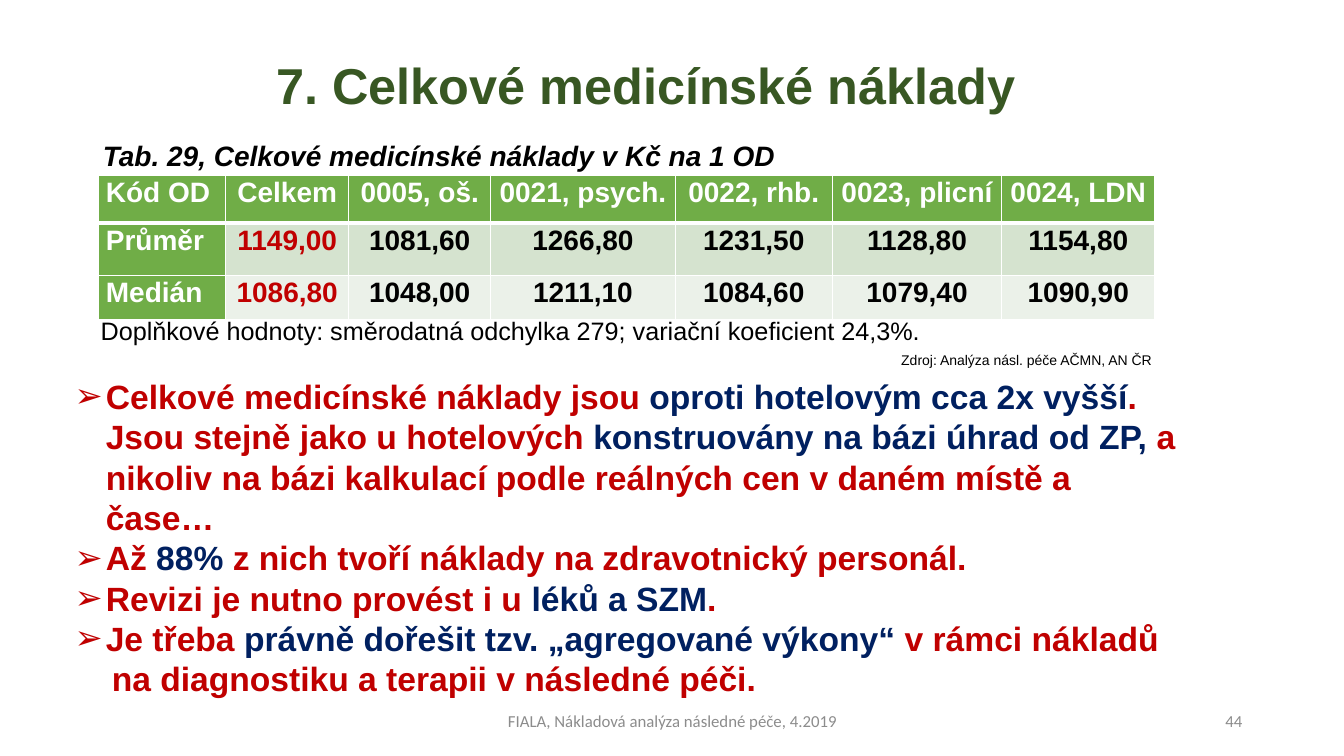
from itertools import cycle

from lxml import etree
from pptx import Presentation
from pptx import util as u
from pptx.dml.color import RGBColor
from pptx.enum import text
from pptx.oxml import ns

COLORS = {
    "title": "385723", "black": "000000", "white": "FFFFFF", "red": "C00000",
    "navy": "002060", "grey": "8C8C8C", "green": "70AD47",
    "band_dark": "D5E3CF", "band_light": "EBF1E9",
}
LEFT, CENTER, RIGHT, JUSTIFY = (
    text.PP_ALIGN.LEFT, text.PP_ALIGN.CENTER, text.PP_ALIGN.RIGHT, text.PP_ALIGN.JUSTIFY)

COST_TABLE = [
    ["Kód OD", "Celkem", "0005, oš.", "0021, psych.", "0022, rhb.", "0023, plicní", "0024, LDN"],
    ["Průměr", "1149,00", "1081,60", "1266,80", "1231,50", "1128,80", "1154,80"],
    ["Medián", "1086,80", "1048,00", "1211,10", "1084,60", "1079,40", "1090,90"],
]
COLUMN_SHARES = [9.45, 9.15, 10.57, 13.72, 11.7, 12.6, 11.4]
ROW_SHARES = [6.27, 6.93, 5.87]

# Asterisks switch between the main and the highlight colour.
FINDINGS = [
    "Celkové medicínské náklady jsou *oproti hotelovým cca 2x vyšší*. Jsou stejně jako "
    "u hotelových *konstruovány na bázi úhrad od ZP, *a nikoliv na bázi kalkulací podle "
    "reálných cen v daném místě a čase…",
    "Až *88%* z nich tvoří náklady na zdravotnický personál.",
    "Revizi je nutno provést i u *léků a SZM*.",
    "Je třeba *právně dořešit tzv. „agregované výkony“* v rámci nákladů",
]
FINDINGS_TAIL = "na diagnostiku a terapii v následné péči."


class SlideBuilder:
    """Places elements on one slide; every box is in percent of the slide's size."""

    def __init__(self, prs, layout):
        self.prs = prs
        self.s = prs.slides.add_slide(layout)

    def x(self, share):
        return int(self.prs.slide_width * share / 100)

    def y(self, share):
        return int(self.prs.slide_height * share / 100)

    def frame(self, box):
        left, top, width, height = box
        return self.x(left), self.y(top), self.x(width), self.y(height)

    def style(self, r, size, color, bold=False, italic=False, font="Arial"):
        r.font.size, r.font.name = u.Pt(size), font
        r.font.bold, r.font.italic = bold, italic
        r.font.color.rgb = RGBColor.from_string(COLORS[color])

    def paragraph(self, p, words, size, color, align=LEFT, spacing=1.0, before=0, **font):
        p.text = words
        p.alignment, p.line_spacing = align, spacing
        p.space_before, p.space_after = u.Pt(before), u.Pt(0)
        for r in p.runs:
            self.style(r, size, color, **font)

    def bullet(self, p, char=None, margin=0.0, indent=0.0):
        """Set the indents and the bullet; no char means no bullet."""
        pPr = p._p.get_or_add_pPr()
        pPr.set("marL", str(u.Inches(margin)))
        pPr.set("indent", str(u.Inches(indent)))
        if char:
            etree.SubElement(pPr, ns.qn("a:buFont"), typeface="Arial")
            etree.SubElement(pPr, ns.qn("a:buChar"), char=char)
        else:
            etree.SubElement(pPr, ns.qn("a:buNone"))

    def placeholder(self, idx, box, anchor=text.MSO_ANCHOR.TOP):
        sp = self.s.placeholders[idx]
        sp.left, sp.top, sp.width, sp.height = self.frame(box)
        tf = sp.text_frame
        tf.word_wrap, tf.auto_size = True, text.MSO_AUTO_SIZE.NONE
        tf.vertical_anchor = anchor
        return tf

    def title(self, words, box):
        tf = self.placeholder(0, box, text.MSO_ANCHOR.MIDDLE)
        self.paragraph(tf.paragraphs[0], words, 36, "title", CENTER, 0.9, bold=True)

    def caption(self, words, box):
        p = self.placeholder(1, box).paragraphs[0]
        self.paragraph(p, words, 20, "black", spacing=0.9, before=10, bold=True, italic=True)
        self.bullet(p)

    def findings(self, items, tail, box):
        tf = self.placeholder(2, box)
        for i, item in enumerate(items):
            p = tf.add_paragraph() if i else tf.paragraphs[0]
            self.paragraph(p, "", 24, "red")
            for part, color in zip(item.split("*"), cycle(["red", "navy"])):
                r = p.add_run()
                r.text = part
                self.style(r, 24, color, bold=True)
            self.bullet(p, "➢", 0.31, -0.31)
        p = tf.add_paragraph()
        self.paragraph(p, tail, 24, "red", bold=True)
        self.bullet(p, margin=0.37)

    def label(self, words, box, size, color="black", align=LEFT, wrap=True,
              anchor=text.MSO_ANCHOR.TOP, **font):
        tf = self.s.shapes.add_textbox(*self.frame(box)).text_frame
        tf.word_wrap, tf.vertical_anchor = wrap, anchor
        self.paragraph(tf.paragraphs[0], words, size, color, align, **font)

    def borders(self, cell, **widths):
        """Draw white cell borders; widths are points by side (L, R, T, B)."""
        tcPr = cell._tc.get_or_add_tcPr()
        for side, width in widths.items():
            ln = etree.SubElement(tcPr, ns.qn(f"a:ln{side}"), w=str(u.Pt(width)))
            fill = etree.SubElement(ln, ns.qn("a:solidFill"))
            etree.SubElement(fill, ns.qn("a:srgbClr"), val=COLORS["white"])

    def table(self, rows, left, top, columns, heights):
        box = self.frame((left, top, sum(columns), sum(heights)))
        tbl = self.s.shapes.add_table(len(rows), len(columns), *box).table
        tbl.horz_banding = False
        for col, share in zip(tbl.columns, columns):
            col.width = self.x(share)
        for row, share in zip(tbl.rows, heights):
            row.height = self.y(share)
        for i, values in enumerate(rows):
            for j, value in enumerate(values):
                cell = tbl.cell(i, j)
                cell.margin_left = cell.margin_right = u.Inches(0.07)
                cell.margin_top = cell.margin_bottom = 0
                heading = i == 0 or j == 0
                color = "white" if heading else "red" if j == 1 else "black"
                self.paragraph(cell.text_frame.paragraphs[0], value, 20, color,
                               CENTER if j else LEFT, 1.07, bold=True)
                self.borders(cell, L=1, R=1, T=3 if i == 1 else 1, B=1 if i else 3)
                band = "band_dark" if i == 1 else "band_light"
                cell.fill.solid()
                cell.fill.fore_color.rgb = RGBColor.from_string(
                    COLORS["green" if heading else band])


def main():
    prs = Presentation()
    prs.slide_width, prs.slide_height = u.Inches(13.33), u.Inches(7.5)
    two_content = prs.slide_layouts[3]
    b = SlideBuilder(prs, two_content)
    b.title("7. Celkové medicínské náklady", (6.9, 5.33, 82.37, 12.8))
    b.caption("Tab. 29, Celkové medicínské náklady v\u00a0Kč na 1 OD".replace("\u00a0", " "),
              (6.9, 18.13, 86.27, 71.47))
    b.table(COST_TABLE, 7.35, 23.2, COLUMN_SHARES, ROW_SHARES)
    b.label("Doplňkové hodnoty: směrodatná odchylka 279; variační koeficient 24,3%.",
            (6.75, 41.07, 63.92, 5.33), 18, align=JUSTIFY)
    b.label("Zdroj: Analýza násl. péče AČMN, AN ČR", (66.32, 45.87, 20.48, 3.6), 10, wrap=False)
    b.findings(FINDINGS, FINDINGS_TAIL, (4.8, 49.07, 84.4, 39.07))
    footer = dict(size=12, color="grey", anchor=text.MSO_ANCHOR.MIDDLE, font="Calibri")
    b.label("FIALA, Nákladová analýza následné péče, 4.2019", (33.16, 92.67, 33.76, 5.33),
            align=CENTER, **footer)
    b.label("44", (70.67, 92.67, 22.51, 5.33), align=RIGHT, **footer)
    prs.save("out.pptx")


if __name__ == "__main__":
    main()
